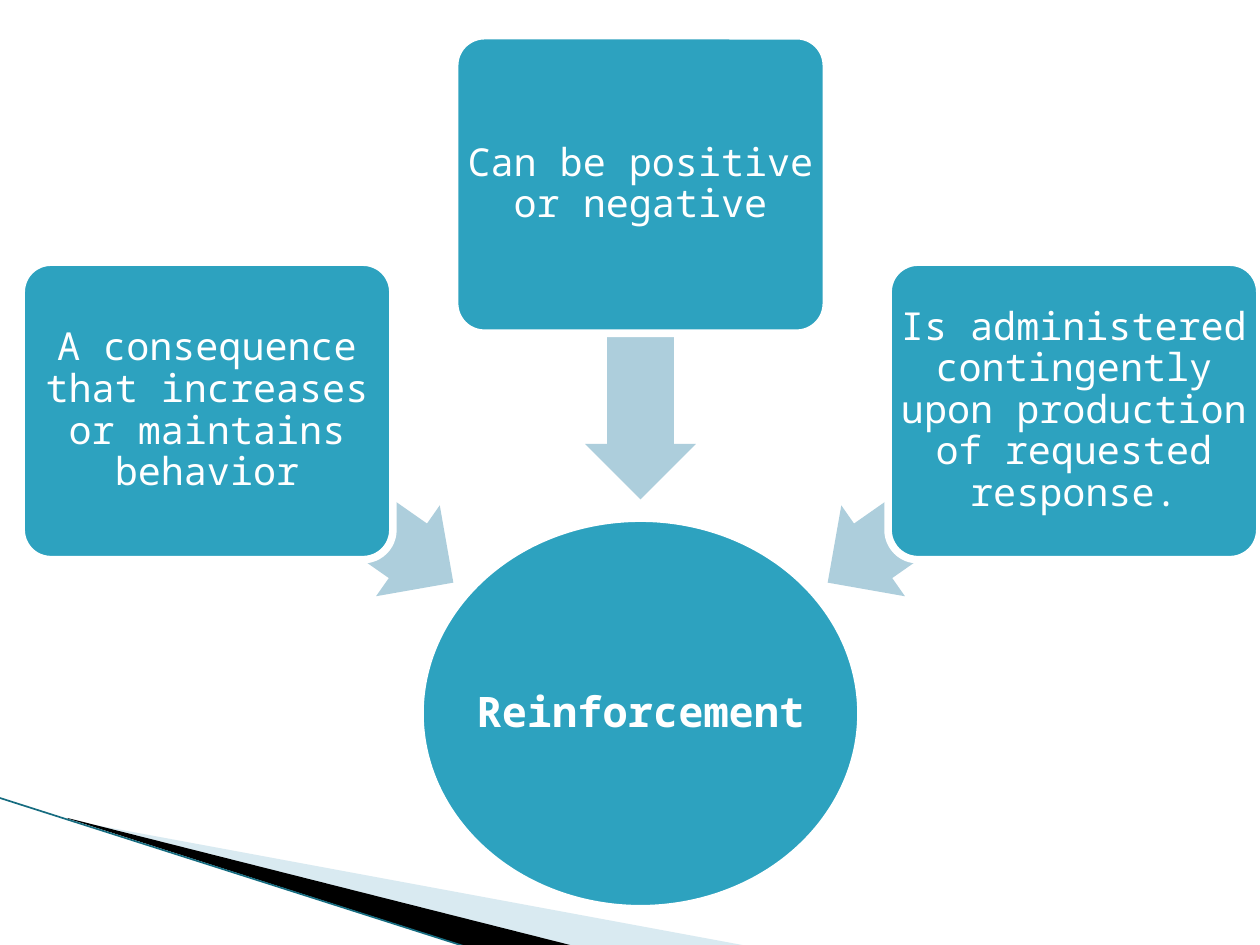
from lxml import etree
from pptx import Presentation
from pptx.dml.color import RGBColor
from pptx.enum.shapes import MSO_CONNECTOR, MSO_SHAPE
from pptx.enum.text import MSO_ANCHOR, PP_ALIGN
from pptx.oxml.ns import qn
from pptx.util import Pt

ELLIPSE = MSO_SHAPE.OVAL
ROUNDED = MSO_SHAPE.ROUNDED_RECTANGLE
LEFT_ARROW = MSO_SHAPE.LEFT_ARROW
STRAIGHT = MSO_CONNECTOR.STRAIGHT
CENTER = PP_ALIGN.CENTER
MIDDLE = MSO_ANCHOR.MIDDLE

TEAL = RGBColor(0x2D, 0xA2, 0xBF)
ARROW_BLUE = RGBColor(0xAD, 0xCE, 0xDC)
WEDGE_BLUE = RGBColor(0xA0, 0xCB, 0xDC)
EDGE_TEAL = RGBColor(0x16, 0x6C, 0x80)
BLACK = RGBColor(0, 0, 0)
WHITE = RGBColor(255, 255, 255)

FONT = "Noto Sans Mono"
CARD_WIDTH, CARD_HEIGHT = 212.4, 170
CARD_STEP = 247.7
SIDE_CARD_DROP = 129.4
CARDS = [
    # text, column, arrow length, arrow centre offset (x, y), arrow rotation
    ("A consequence that increases or maintains behavior", -1, 171, (-177, 263.5), 215),
    ("Can be positive or negative", 0, 180, (0, 175), 270),
    ("Is administered contingently upon production of requested response.", 1, 171, (177, 263.5), 325),
]


def write_text(shape, text, size=22, bold=False, wrap=True):
    frame = shape.text_frame
    frame.word_wrap = wrap
    frame.vertical_anchor = MIDDLE
    frame.margin_left = frame.margin_right = frame.margin_top = frame.margin_bottom = 0
    paragraph = frame.paragraphs[0]
    paragraph.alignment = CENTER
    paragraph.line_spacing = 0.9
    run = paragraph.add_run()
    run.text = text
    run.font.name = FONT
    run.font.size = Pt(size)
    run.font.bold = bold
    run.font.color.rgb = WHITE


def add_centered(slide, kind, center_x, center_y, width, height, fill, outlined=False):
    """Add a filled preset shape around a centre point."""
    shape = slide.shapes.add_shape(
        kind, Pt(center_x - width / 2), Pt(center_y - height / 2), Pt(width), Pt(height))
    shape.shadow.inherit = False
    shape.fill.solid()
    shape.fill.fore_color.rgb = fill
    if outlined:
        shape.line.color.rgb = WHITE
        shape.line.width = Pt(4.33)
    else:
        shape.line.fill.background()
    return shape


def add_wedge(slide, points, fill, opacity=None):
    corners = [(Pt(x), Pt(y)) for x, y in points]
    builder = slide.shapes.build_freeform(*corners[0])
    builder.add_line_segments(corners[1:], close=True)
    wedge = builder.convert_to_shape()
    wedge.shadow.inherit = False
    wedge.fill.solid()
    wedge.fill.fore_color.rgb = fill
    wedge.line.fill.background()
    if opacity is not None:
        color = wedge._element.spPr.find(qn("a:solidFill")).find(qn("a:srgbClr"))
        etree.SubElement(color, qn("a:alpha")).set("val", str(opacity * 1000))


def add_corner_decoration(slide, left, top):
    def place(*points):
        return [(left + x, top + y) for x, y in points]

    add_wedge(slide, place((40, 13), (428.4, 85), (328.3, 85), (40, 12.2)), WEDGE_BLUE, opacity=40)
    add_wedge(slide, place((38.5, 11.6), (329, 85), (267.8, 85.5), (39, 12)), BLACK)
    (x1, y1), (x2, y2) = place((-0.7, 0), (267.1, 85.5))
    edge = slide.shapes.add_connector(STRAIGHT, Pt(x1), Pt(y1), Pt(x2), Pt(y2))
    edge.line.color.rgb = EDGE_TEAL
    edge.line.width = Pt(0.95)
    etree.SubElement(edge._element.spPr, qn("a:effectLst"))


def add_converging_diagram(slide, left, top, width, height):
    """Three cards whose arrows point to the ellipse at the bottom."""
    middle = left + width / 2
    hub_width, hub_height = 252, 223.2
    hub = add_centered(slide, ELLIPSE, middle, top + height - hub_height / 2,
                       hub_width, hub_height, TEAL, outlined=True)
    write_text(hub, "Reinforcement", size=24, bold=True, wrap=False)

    for text, column, length, (offset_x, offset_y), rotation in CARDS:
        arrow = add_centered(slide, LEFT_ARROW, middle + offset_x, top + offset_y,
                             length, 63.4, ARROW_BLUE)
        arrow.adjustments[0] = 0.6
        arrow.adjustments[1] = 0.5
        arrow.rotation = rotation
        card_y = top + CARD_HEIGHT / 2 + abs(column) * SIDE_CARD_DROP
        card = add_centered(slide, ROUNDED, middle + column * CARD_STEP, card_y,
                            CARD_WIDTH, CARD_HEIGHT, TEAL, outlined=True)
        card.adjustments[0] = 0.1
        write_text(card, text)


def main():
    presentation = Presentation()
    presentation.slide_width = Pt(720)
    presentation.slide_height = Pt(540)
    slide = presentation.slides.add_slide(presentation.slide_layouts[6])
    add_corner_decoration(slide, 0, 455.8)
    add_converging_diagram(slide, 12, 20.4, 708, 498.9)
    presentation.save("out.pptx")


if __name__ == "__main__":
    main()
